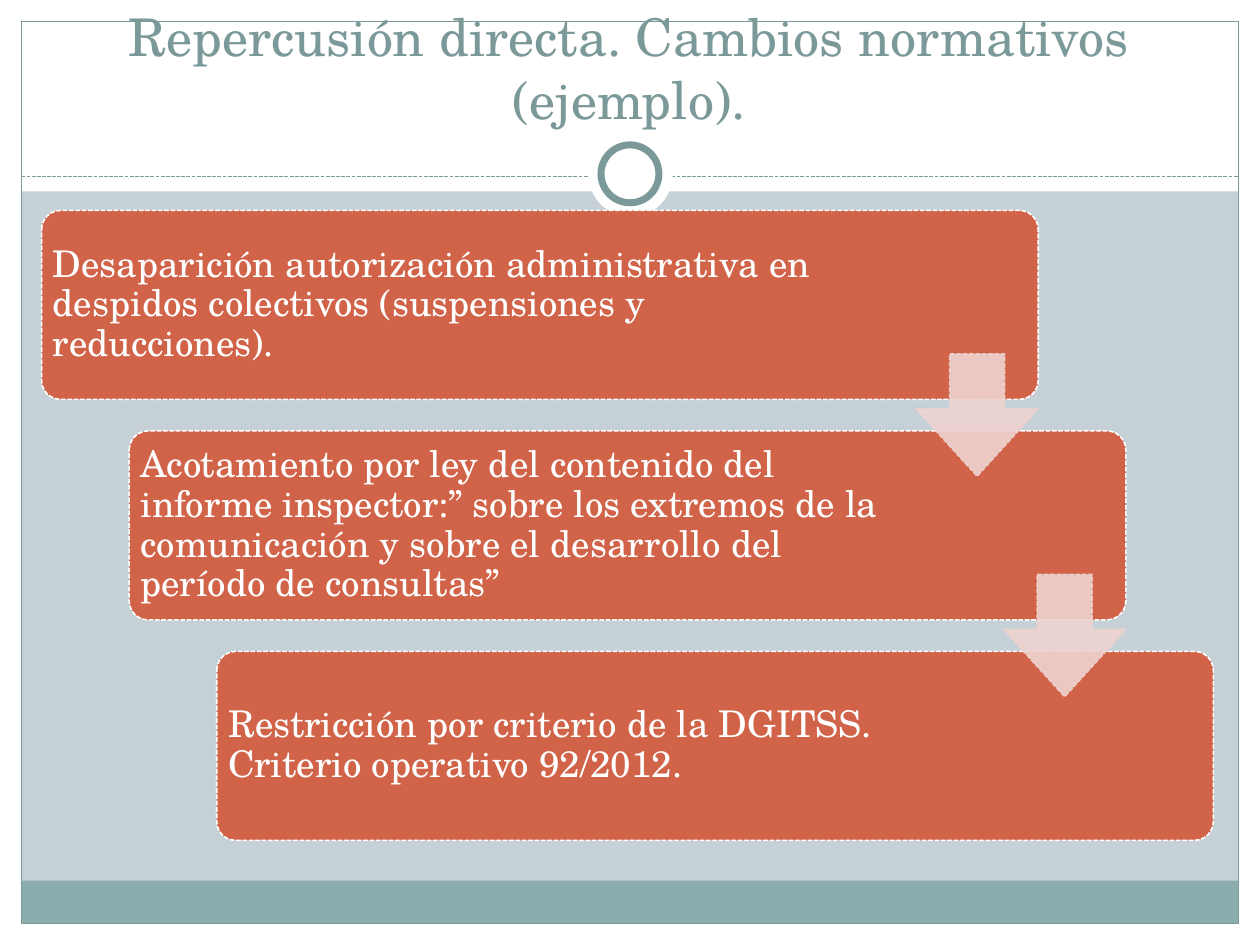
from lxml.etree import SubElement
from pptx import Presentation
from pptx.dml.color import RGBColor
from pptx.enum.dml import MSO_LINE
from pptx.enum.shapes import MSO_CONNECTOR, MSO_SHAPE
from pptx.enum.text import MSO_ANCHOR, PP_ALIGN
from pptx.oxml.ns import qn
from pptx.util import Inches, Pt

WHITE = RGBColor(0xFF, 0xFF, 0xFF)
BACKGROUND = RGBColor(0xC5, 0xD1, 0xD7)
TEAL = RGBColor(0x7C, 0x99, 0x9A)
FOOTER = RGBColor(0x8C, 0xAD, 0xAE)
RED = RGBColor(0xD1, 0x63, 0x49)
PINK = RGBColor(0xEE, 0xD3, 0xD0)

FONT = "TeX Gyre Schola"
COLUMNS, ROWS = 100, 75

STEPS = [
    ("Desaparición autorización administrativa en despidos colectivos "
     "(suspensiones y reducciones).", 63.7),
    ("Acotamiento por ley del contenido del informe inspector:” sobre los "
     "extremos de la comunicación y sobre el desarrollo del período de "
     "consultas”", 62.3),
    ("Restricción por criterio de la DGITSS. Criterio operativo 92/2012.", 62.3),
]
STEP_LEFT, STEP_TOP, STEP_WIDTH, STEP_HEIGHT = 3.3, 16.7, 79.1, 15
STEP_RIGHT, STEP_DOWN = 6.95, 17.5
ARROW_SIZE = 9.7


class SlideBuilder:
    """Draws on one slide; lengths are columns and rows of a 100 by 75 grid."""

    def __init__(self, presentation):
        self.column = presentation.slide_width / COLUMNS
        self.row = presentation.slide_height / ROWS
        self.slide = presentation.slides.add_slide(presentation.slide_layouts[6])
        background = self.slide.background.fill
        background.solid()
        background.fore_color.rgb = BACKGROUND

    def place(self, x, y, width, height):
        return (round(x * self.column), round(y * self.row),
                round(width * self.column), round(height * self.row))

    def style_line(self, line, color, width, dashed):
        line.color.rgb = color
        line.width = Pt(width)
        if dashed:
            line.dash_style = MSO_LINE.SQUARE_DOT

    def shape(self, kind, box, fill=None, line=None, line_width=0.75,
              dashed=False, adjustments=(), opacity=None):
        shape = self.slide.shapes.add_shape(kind, *self.place(*box))
        shape.shadow.inherit = False
        for index, value in enumerate(adjustments):
            shape.adjustments[index] = value
        if fill is None:
            shape.fill.background()
        else:
            shape.fill.solid()
            shape.fill.fore_color.rgb = fill
        if line is None:
            shape.line.fill.background()
        else:
            self.style_line(shape.line, line, line_width, dashed)
        if opacity is not None:
            for color in shape.element.spPr.iter(qn("a:srgbClr")):
                SubElement(color, qn("a:alpha"), val=str(opacity * 1000))
        return shape

    def rule(self, left, right, y, color):
        x, top, width, _ = self.place(left, y, right - left, 0)
        connector = self.slide.shapes.add_connector(
            MSO_CONNECTOR.STRAIGHT, x, top, x + width, top)
        self.style_line(connector.line, color, 0.75, True)
        SubElement(connector.element.spPr, qn("a:effectLst"))

    def text(self, box, words, size, color, anchor, align=PP_ALIGN.LEFT,
             inset=None, line_spacing=None):
        frame = self.slide.shapes.add_textbox(*self.place(*box)).text_frame
        frame.word_wrap = True
        frame.vertical_anchor = anchor
        if inset is not None:
            frame.margin_left = frame.margin_right = Inches(inset)
            frame.margin_top = frame.margin_bottom = Inches(inset)
        paragraph = frame.paragraphs[0]
        paragraph.text = words
        paragraph.alignment = align
        paragraph.line_spacing = line_spacing
        paragraph.font.name = FONT
        paragraph.font.size = Pt(size)
        paragraph.font.color.rgb = color

    def step(self, x, y, words, text_width):
        self.shape(MSO_SHAPE.ROUNDED_RECTANGLE, (x, y, STEP_WIDTH, STEP_HEIGHT),
                   RED, WHITE, 0.9, dashed=True, adjustments=[0.1])
        self.text((x, y, text_width, STEP_HEIGHT), words, 21, WHITE,
                  MSO_ANCHOR.MIDDLE, inset=0.09, line_spacing=0.9)

    def arrow(self, x, y):
        self.shape(MSO_SHAPE.DOWN_ARROW, (x, y, ARROW_SIZE, ARROW_SIZE), PINK, PINK,
                   0.9, dashed=True, adjustments=[0.45, 0.55], opacity=90)

    def frame(self):
        """Draws the white margins, footer band, border and ring."""
        margin = 1.7
        inner_width = COLUMNS - 2 * margin
        for box in [(0, ROWS - margin, COLUMNS, margin),
                    (0, 0, COLUMNS, 15.2),
                    (0, 0, margin, ROWS),
                    (COLUMNS - margin, 0, margin, ROWS)]:
            self.shape(MSO_SHAPE.RECTANGLE, box, WHITE)
        self.shape(MSO_SHAPE.RECTANGLE, (margin, 69.9, inner_width, 3.4), FOOTER)
        self.shape(MSO_SHAPE.RECTANGLE,
                   (margin, margin, inner_width, ROWS - 2 * margin), line=TEAL)
        self.rule(margin, COLUMNS - margin, 14, TEAL)
        self.shape(MSO_SHAPE.OVAL, (46.7, 10.5, 6.7, 6.7), WHITE)
        self.shape(MSO_SHAPE.OVAL, (47.7, 11.5, 4.6, 4.6), WHITE, TEAL, 4)


def main():
    presentation = Presentation()
    presentation.slide_width = Inches(10)
    presentation.slide_height = Inches(7.5)
    builder = SlideBuilder(presentation)

    builder.frame()
    builder.text((3.3, 2.5, 93.3, 8.3),
                 "Repercusión directa. Cambios normativos (ejemplo).",
                 29.7, TEAL, MSO_ANCHOR.BOTTOM, PP_ALIGN.CENTER)
    for index, (words, text_width) in enumerate(STEPS):
        builder.step(STEP_LEFT + index * STEP_RIGHT, STEP_TOP + index * STEP_DOWN,
                     words, text_width)
    for index in range(len(STEPS) - 1):
        builder.arrow(STEP_LEFT + STEP_WIDTH - ARROW_SIZE + index * STEP_RIGHT,
                      28.1 + index * STEP_DOWN)

    presentation.save("out.pptx")


if __name__ == "__main__":
    main()
